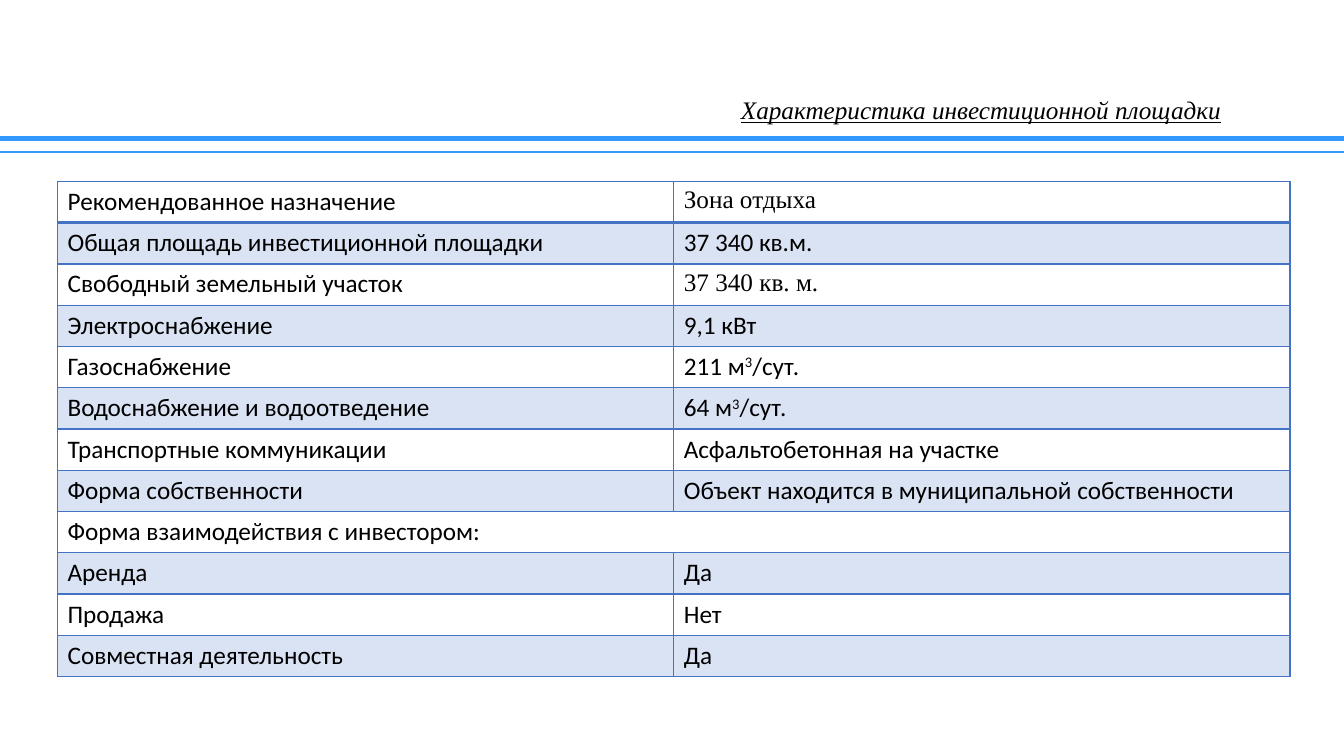
from lxml.etree import SubElement
from pptx import Presentation
from pptx.dml.color import RGBColor
from pptx.enum.shapes import MSO_CONNECTOR
from pptx.enum.text import MSO_ANCHOR, PP_ALIGN
from pptx.oxml.ns import qn
from pptx.util import Cm, Pt

SLIDE_WIDTH, SLIDE_HEIGHT = Cm(33.87), Cm(19.05)
BLACK, RULE_BLUE, BORDER_BLUE, BAND_BLUE = "000000", "3399FF", "4472C4", "DAE3F3"
SANS, SERIF = "Calibri", "Times New Roman"
ROW_HEIGHT, COLUMN_WIDTH = Cm(1.04), Cm(15.53)
SITE_FACTS = [
    ("Рекомендованное назначение", "Зона отдыха", SERIF),
    ("Общая площадь инвестиционной площадки", "37 340 кв.м.", SANS),
    ("Свободный земельный участок", "37 340 кв. м.", SERIF),
    ("Электроснабжение", "9,1 кВт", SANS),
    ("Газоснабжение", "211 м^3^/сут.", SANS),
    ("Водоснабжение и водоотведение", "64 м^3^/сут.", SANS),
    ("Транспортные коммуникации", "Асфальтобетонная на участке", SANS),
    ("Форма собственности", "Объект находится в муниципальной собственности", SANS),
    ("Форма взаимодействия с инвестором:", None, SANS),
    ("Аренда", "Да", SANS),
    ("Продажа", "Нет", SANS),
    ("Совместная деятельность", "Да", SANS),
]


def color(hex_value):
    return RGBColor.from_string(hex_value)


def format_font(font, **values):
    font.color.rgb = color(BLACK)
    for name, value in {"size": Pt(18), **values}.items():
        setattr(font, name, value)


def add_title(slide, text):
    title = slide.shapes.title
    place = {"left": Cm(16.94), "top": Cm(2.46), "width": Cm(15.57), "height": Cm(0.69)}
    for name, value in place.items():
        setattr(title, name, value)
    frame = title.text_frame
    frame.word_wrap = True
    frame.vertical_anchor = MSO_ANCHOR.MIDDLE
    paragraph = frame.paragraphs[0]
    paragraph.alignment = PP_ALIGN.CENTER
    paragraph.line_spacing = 0.9
    run = paragraph.add_run()
    run.text = text
    format_font(run.font, name=SERIF, italic=True, underline=True)


def add_rule(slide, top, weight):
    rule = slide.shapes.add_connector(MSO_CONNECTOR.STRAIGHT, 0, top, SLIDE_WIDTH, top)
    rule.line.color.rgb = color(RULE_BLUE)
    rule.line.width = Pt(weight)
    SubElement(rule._element.spPr, qn("a:effectLst"))


def set_borders(cell, weights):
    properties = cell._tc.get_or_add_tcPr()
    for side, weight in weights.items():
        border = SubElement(properties, qn(f"a:ln{side}"), w=str(Pt(weight)))
        fill = SubElement(border, qn("a:solidFill"))
        SubElement(fill, qn("a:srgbClr"), val=BORDER_BLUE)


def write_cell(cell, text, font_name):
    paragraph = cell.text_frame.paragraphs[0]
    for index, part in enumerate(text.split("^")):
        run = paragraph.add_run()
        run.text = part
        format_font(run.font, name=font_name)
        if index % 2:
            run._r.get_or_add_rPr().set("baseline", "30000")


def style_cell(cell, row):
    set_borders(cell, {"L": 1, "R": 1, "T": 2 if row == 1 else 1, "B": 2 if row == 0 else 1})
    if row % 2:
        cell.fill.solid()
        cell.fill.fore_color.rgb = color(BAND_BLUE)
    else:
        cell.fill.background()


def add_facts_table(slide, facts):
    frame = slide.shapes.add_table(
        len(facts), 2, Cm(1.45), Cm(4.57), 2 * COLUMN_WIDTH, len(facts) * ROW_HEIGHT)
    table = frame.table
    table.first_row = False
    table.horz_banding = False
    for column in table.columns:
        column.width = COLUMN_WIDTH
    for row, (label, value, value_font) in enumerate(facts):
        table.rows[row].height = ROW_HEIGHT
        label_cell, value_cell = table.cell(row, 0), table.cell(row, 1)
        for cell in (label_cell, value_cell):
            style_cell(cell, row)
        write_cell(label_cell, label, SANS)
        if value is None:
            label_cell.merge(value_cell)
        else:
            write_cell(value_cell, value, value_font)


def main():
    presentation = Presentation()
    presentation.slide_width, presentation.slide_height = SLIDE_WIDTH, SLIDE_HEIGHT
    slide = presentation.slides.add_slide(presentation.slide_layouts[5])
    add_rule(slide, Cm(3.5), 3.5)
    add_rule(slide, Cm(3.82), 1.5)
    add_title(slide, "Характеристика инвестиционной площадки")
    add_facts_table(slide, SITE_FACTS)
    presentation.save("out.pptx")


if __name__ == "__main__":
    main()
